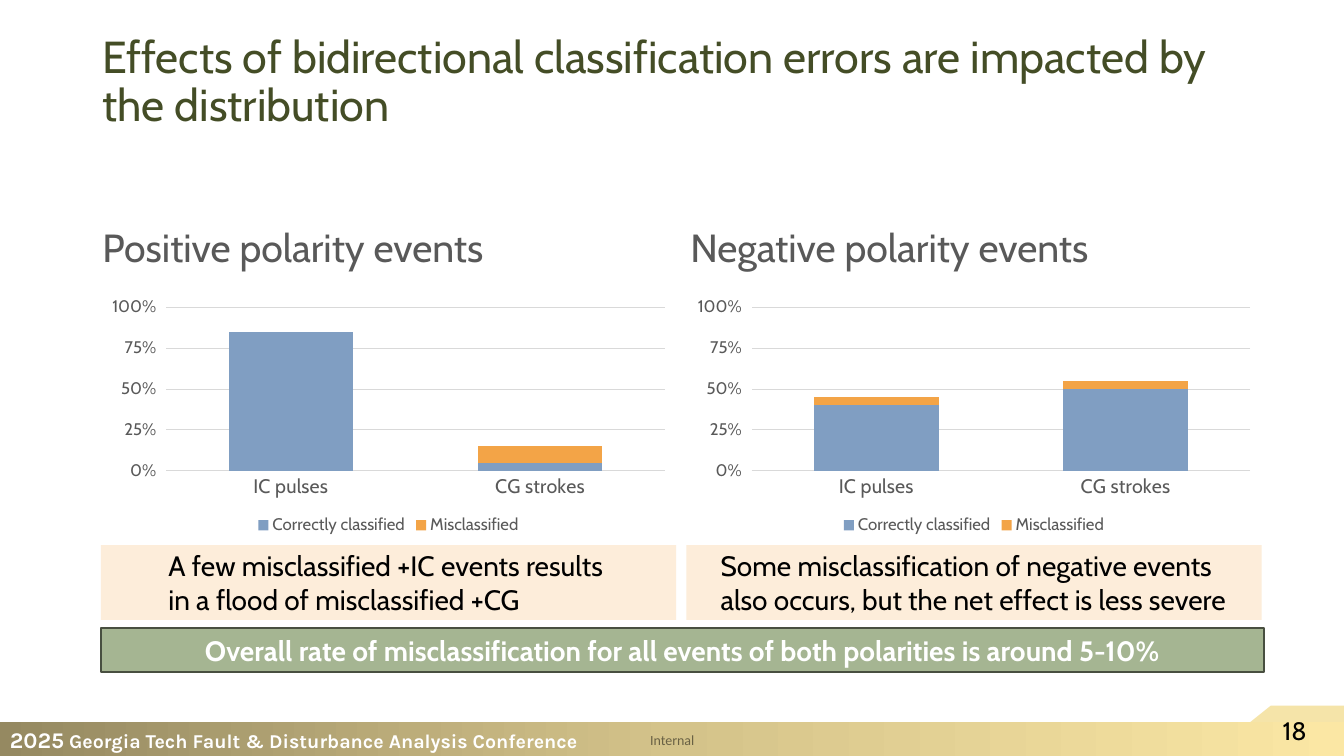
from copy import deepcopy
from dataclasses import dataclass

from lxml.etree import SubElement
from pptx import Presentation
from pptx.chart.data import CategoryChartData
from pptx.dml.color import RGBColor
from pptx.enum.chart import XL_CHART_TYPE, XL_LEGEND_POSITION, XL_TICK_MARK
from pptx.enum.shapes import MSO_SHAPE
from pptx.enum.text import MSO_ANCHOR, PP_ALIGN
from pptx.oxml.ns import qn
from pptx.util import Inches, Pt

COLUMNS, ROWS = 160, 90
CELL = Inches(1) // 12

OLIVE, GRAY, BLACK, WHITE = "444D26", "595959", "000000", "FFFFFF"
GRID, BLUE, ORANGE = "D9D9D9", "809EC2", "F3A447"
PEACH, SAGE, DARK_SAGE, CREAM = "FDEDDA", "A5B592", "484F40", "F5E4A9"


def rgb(code):
    return RGBColor.from_string(code)


def cells(*counts):
    return [round(count * CELL) for count in counts]


@dataclass
class Run:
    text: str
    size: int
    color: str
    bold: bool = False
    face: str = "Cabin"
    alpha: int = 100


class SlideBuilder:
    def __init__(self, deck):
        self.slide = deck.slides.add_slide(deck.slide_layouts[6])
        self.shapes = self.slide.shapes

    def style_font(self, font, size, color, bold=False, face="Cabin"):
        font.size, font.bold, font.name = Pt(size), bold, face
        font.color.rgb = rgb(color)

    def fill_frame(self, frame, lines, anchor=MSO_ANCHOR.TOP, align=PP_ALIGN.LEFT,
                   spacing=1.0, insets=(0.1, 0.05, 0.1, 0.05)):
        frame.word_wrap = True
        frame.vertical_anchor = anchor
        (frame.margin_left, frame.margin_top,
         frame.margin_right, frame.margin_bottom) = map(Inches, insets)
        paragraph = frame.paragraphs[0]
        paragraph.alignment, paragraph.line_spacing = align, spacing
        for number, line in enumerate(lines):
            if number:
                paragraph.add_line_break()
            for part in line:
                run = paragraph.add_run()
                run.text = part.text
                self.style_font(run.font, part.size, part.color, part.bold, part.face)
                if part.alpha < 100:
                    tint = run.font.fill._xPr.find(qn("a:solidFill"))[0]
                    SubElement(tint, qn("a:alpha")).set("val", str(part.alpha * 1000))

    def text(self, area, run, **layout):
        box = self.shapes.add_textbox(*cells(*area))
        self.fill_frame(box.text_frame, [[run]], **layout)

    def finish(self, shape, fill, line=None):
        shape.shadow.inherit = False
        if isinstance(fill, str):
            shape.fill.solid()
            shape.fill.fore_color.rgb = rgb(fill)
        else:
            self.gradient(shape, fill)
        if line:
            shape.line.color.rgb = rgb(line)
            shape.line.width = Pt(1.5)
        else:
            shape.line.fill.background()

    def gradient(self, shape, colors):
        shape.fill.gradient()
        shape.fill.gradient_angle = 0
        stops = shape._element.spPr.find(qn("a:gradFill")).find(qn("a:gsLst"))
        while len(stops) < len(colors):
            stops.append(deepcopy(stops[0]))
        for number, (stop, color) in enumerate(zip(shape.fill.gradient_stops, colors)):
            stop.position = number / (len(colors) - 1)
            stop.color.rgb = rgb(color)

    def panel(self, area, fill, lines, line=None, **layout):
        box = self.shapes.add_shape(MSO_SHAPE.RECTANGLE, *cells(*area))
        self.finish(box, fill, line)
        self.fill_frame(box.text_frame, lines, anchor=MSO_ANCHOR.MIDDLE, **layout)

    def outline(self, points, fill):
        start, *others = [cells(*point) for point in points]
        builder = self.shapes.build_freeform(*start)
        builder.add_line_segments(others, close=True)
        self.finish(builder.convert_to_shape(), fill)

    def stacked_columns(self, area, categories, series):
        data = CategoryChartData(number_format="0%")
        data.categories = categories
        for name, values, _ in series:
            data.add_series(name, values)
        chart = self.shapes.add_chart(
            XL_CHART_TYPE.COLUMN_STACKED, *cells(*area), data).chart
        self.style_font(chart.font, 10, BLACK)
        chart.has_title = False
        chart.has_legend = True
        chart.legend.position = XL_LEGEND_POSITION.BOTTOM
        chart.legend.include_in_layout = False
        self.style_font(chart.legend.font, 12, GRAY)

        plot = chart.plots[0]
        plot.gap_width, plot.overlap, plot.vary_by_categories = 100, 100, False
        for bars, (_, _, color) in zip(plot.series, series):
            bars.format.fill.solid()
            bars.format.fill.fore_color.rgb = rgb(color)

        names, shares = chart.category_axis, chart.value_axis
        names.major_tick_mark = XL_TICK_MARK.NONE
        self.style_font(names.tick_labels.font, 14, GRAY)
        shares.minimum_scale, shares.maximum_scale, shares.major_unit = 0, 1, 0.25
        shares.major_tick_mark = XL_TICK_MARK.OUTSIDE
        shares.tick_labels.number_format = "0%"
        shares.tick_labels.number_format_is_linked = False
        self.style_font(shares.tick_labels.font, 12, GRAY)
        shares.format.line.fill.background()
        shares.has_major_gridlines = True
        for rule in (names.format.line, shares.major_gridlines.format.line):
            rule.color.rgb = rgb(GRID)
            rule.width = Pt(0.75)


def add_footer(page):
    page.outline([(151.3, 84), (143.8, 90), (160, 90), (160, 84)], CREAM)
    conference = [Run("2025", 16, WHITE, True, "Karla"),
                  Run(" Georgia Tech Fault & Disturbance Analysis Conference",
                      14, WHITE, True, "Karla")]
    page.panel((0, 86, COLUMNS, 4), ("958961", "D4C38A", "FBE7A4"), [conference])
    page.text((151.5, 84.6, 8.5, 4.8), Run("18", 18, BLACK))
    page.text((77.4, 87.1, 5.6, 2), Run("Internal", 10, BLACK, face="Calibri", alpha=50),
              insets=(0, 0, 0, 0))


def main():
    deck = Presentation()
    deck.slide_width, deck.slide_height = cells(COLUMNS, ROWS)
    page = SlideBuilder(deck)
    add_footer(page)
    page.text((11, 1.2, 138, 17.4),
              Run("Effects of bidirectional classification errors are impacted by "
                  "the distribution", 32, OLIVE),
              anchor=MSO_ANCHOR.MIDDLE, spacing=0.9)

    polarities = [
        (11, 12, "Positive polarity events", (0.85, 0.05), (0, 0.1), 0.67,
         ("A few misclassified +IC events results",
          "in a flood of misclassified +CG")),
        (81, 81.7, "Negative polarity events", (0.4, 0.5), (0.05, 0.05), 0.34,
         ("Some misclassification of negative events",
          "also occurs, but the net effect is less severe")),
    ]
    for heading_left, left, heading, correct, wrong, indent, note in polarities:
        page.text((heading_left, 22.1, 68, 10.8), Run(heading, 28, GRAY),
                  anchor=MSO_ANCHOR.BOTTOM, spacing=0.9)
        page.panel((left, 64.9, 68.5, 8.9), PEACH,
                   [[Run(line, 20, BLACK)] for line in note],
                   insets=(indent, 0.05, 0, 0.05))
        page.stacked_columns((left, 34.8, 68.5, 29.4), ("IC pulses", "CG strokes"),
                             [("Correctly classified", correct, BLUE),
                              ("Misclassified", wrong, ORANGE)])

    page.panel((12, 74.8, 138.5, 5.2), SAGE,
               [[Run("Overall rate of misclassification for all events of both "
                     "polarities is around 5-10%", 20, WHITE, True)]],
               line=DARK_SAGE, align=PP_ALIGN.CENTER)
    deck.save("out.pptx")


if __name__ == "__main__":
    main()
